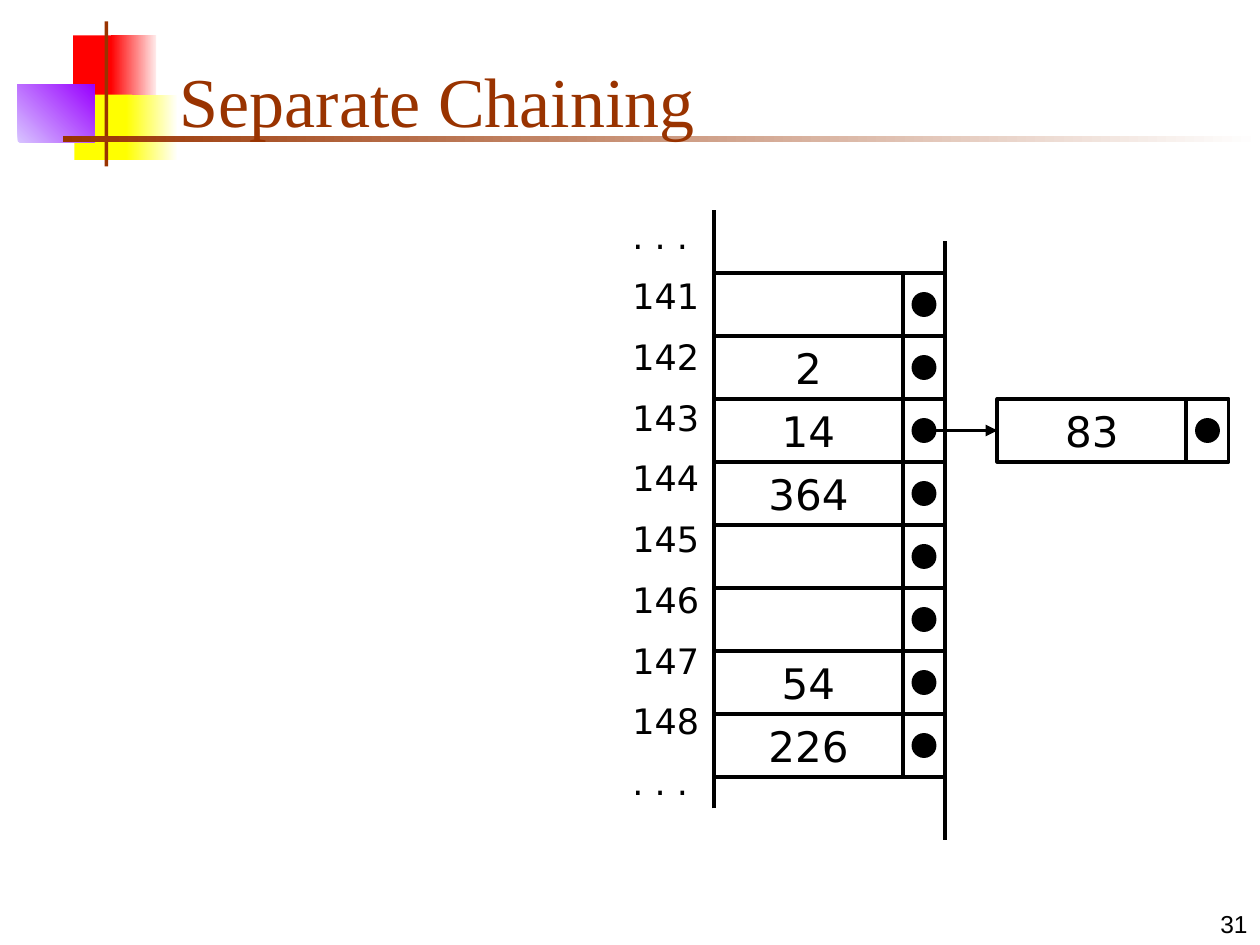
from lxml import etree
from pptx import Presentation
from pptx.dml.color import RGBColor
from pptx.enum.shapes import MSO_CONNECTOR, MSO_SHAPE
from pptx.enum.text import MSO_ANCHOR, PP_ALIGN
from pptx.oxml.ns import qn
from pptx.util import Inches, Pt

RECTANGLE = MSO_SHAPE.RECTANGLE
PROCESS = MSO_SHAPE.FLOWCHART_PROCESS
OVAL = MSO_SHAPE.OVAL
STRAIGHT = MSO_CONNECTOR.STRAIGHT
TOP, MIDDLE, BOTTOM = MSO_ANCHOR.TOP, MSO_ANCHOR.MIDDLE, MSO_ANCHOR.BOTTOM
LEFT, CENTER, RIGHT = PP_ALIGN.LEFT, PP_ALIGN.CENTER, PP_ALIGN.RIGHT

UNIT = 1 / 12
ROW, KEY_WIDTH, POINTER_WIDTH, DOT = 6, 18, 4, 2
TABLE_LEFT, TABLE_TOP, NODE_LEFT = 68, 26, 95
TABLE_RIGHT = TABLE_LEFT + KEY_WIDTH + POINTER_WIDTH
KEYS = ["", "2", "14", "364", "", "", "54", "226"]
CHAINED_ROW = 2
FIRST_INDEX = 141
INK, BROWN = "000000", "993300"
INDEX_FORMAT = {"name": "DejaVu Sans", "size": Pt(20)}
KEY_FORMAT = {"name": "DejaVu Sans", "size": Pt(24)}
TITLE_FORMAT = {"name": "Times New Roman", "size": Pt(40)}
NUMBER_FORMAT = {"name": "Arial", "size": Pt(14)}
ORNAMENTS = [
    ((0.58, 0.28, 0.35, 0.52), ["FF0000"], 0),
    ((0.88, 0.28, 0.36, 0.52), ["FF0000", "FFEAEA"], 0),
    ((0.59, 0.75, 0.46, 0.52), ["FFFF00"], 0),
    ((1, 0.75, 0.4, 0.52), ["FFFF00", "FFFFF8"], 0),
    ((0.14, 0.67, 0.61, 0.46), ["D8C4FF", "9900FF"], 45),
    ((0.83, 0.17, 0.03, 1.15), [BROWN], 0),
    ((0.5, 1.08, 9.5, 0.05), [BROWN, "FFFFFF"], 0),
]


def color(code):
    """Turn a hex string into a colour."""
    return RGBColor.from_string(code)


def grid(*units):
    """Convert grid units to lengths."""
    return [Inches(unit * UNIT) for unit in units]


def write(frame, lines, text_format, ink=INK, align=LEFT, gap=0):
    """Write one paragraph for each line."""
    for position, line in enumerate(lines):
        para = frame.paragraphs[0] if position == 0 else frame.add_paragraph()
        para.alignment = align
        para.space_after = Pt(gap)
        span = para.add_run()
        span.text = line
        span.font.color.rgb = color(ink)
        for name, value in text_format.items():
            setattr(span.font, name, value)


def add_text(page, place, lines, text_format, anchor=BOTTOM, **style):
    """Add a wrapped text box placed in inches."""
    box = page.shapes.add_textbox(*map(Inches, place))
    box.text_frame.word_wrap = True
    box.text_frame.vertical_anchor = anchor
    write(box.text_frame, lines, text_format, **style)


def add_ornament(page, place, shades, angle):
    """Add a borderless rectangle in a plain or graded colour."""
    box = page.shapes.add_shape(RECTANGLE, *map(Inches, place))
    box.shadow.inherit = False
    box.line.fill.background()
    if len(shades) == 1:
        box.fill.solid()
        box.fill.fore_color.rgb = color(shades[0])
        return
    box.fill.gradient()
    box.fill.gradient_angle = angle
    for stop, shade in zip(box.fill.gradient_stops, shades):
        stop.color.rgb = color(shade)


def stroke(item):
    """Give a shape or connector the diagram's line."""
    item.line.color.rgb = color(INK)
    item.line.width = Pt(2.25)


def add_outline(page, kind, *place):
    """Add an unfilled outlined shape on the grid."""
    shape = page.shapes.add_shape(kind, *grid(*place))
    shape.shadow.inherit = False
    shape.fill.background()
    stroke(shape)
    return shape


def add_node(page, left, top, key):
    """Add a key cell, its pointer cell and dot; return the key cell."""
    cell = add_outline(page, PROCESS, left, top, KEY_WIDTH, ROW)
    if key:
        cell.text_frame.word_wrap = False
        cell.text_frame.vertical_anchor = MIDDLE
        write(cell.text_frame, [key], KEY_FORMAT, align=CENTER)
    pointer = left + KEY_WIDTH
    add_outline(page, PROCESS, pointer, top, POINTER_WIDTH, ROW)
    dot = add_outline(page, OVAL, pointer + (POINTER_WIDTH - DOT) / 2,
                      top + (ROW - DOT) / 2, DOT, DOT)
    dot.fill.solid()
    dot.fill.fore_color.rgb = color(INK)
    return cell


def add_line(page, *ends):
    """Add a straight line on the grid."""
    line = page.shapes.add_connector(STRAIGHT, *grid(*ends))
    stroke(line)
    etree.SubElement(line._element.spPr, qn("a:effectLst"))
    return line


def add_link(page, left, top, node):
    """Draw an arrow from a pointer's middle to a node."""
    middle = top + ROW / 2
    arrow = add_line(page, left, middle, NODE_LEFT, middle)
    arrow.end_connect(node, 1)
    etree.SubElement(arrow.line._get_or_add_ln(), qn("a:tailEnd"), type="triangle")


def add_hash_table(page):
    """Add the indexed table and its one chained node."""
    for row, key in enumerate(KEYS):
        add_node(page, TABLE_LEFT, TABLE_TOP + row * ROW, key)
    indexes = [str(FIRST_INDEX + row) for row in range(len(KEYS))]
    add_text(page, (4.92, 1.65, 0.75, 5.02), [". . .", *indexes, ". . ."],
             INDEX_FORMAT, anchor=TOP, gap=10.7)
    add_line(page, TABLE_LEFT, 77, TABLE_LEFT, 20)
    add_line(page, TABLE_RIGHT, 80, TABLE_RIGHT, 23)
    chain_top = TABLE_TOP + CHAINED_ROW * ROW
    node = add_node(page, NODE_LEFT, chain_top, "83")
    add_link(page, TABLE_RIGHT - POINTER_WIDTH / 2, chain_top, node)


def main():
    """Build and save the slide."""
    deck = Presentation()
    deck.slide_width, deck.slide_height = Inches(10), Inches(7.5)
    page = deck.slides.add_slide(deck.slide_layouts[6])
    for ornament in ORNAMENTS:
        add_ornament(page, *ornament)
    add_text(page, (7.92, 7, 2.08, 0.5), ["31"], NUMBER_FORMAT, align=RIGHT)
    add_text(page, (1.33, 0.25, 8.52, 0.92), ["Separate Chaining"],
             TITLE_FORMAT, ink=BROWN)
    add_hash_table(page)
    deck.save("out.pptx")


if __name__ == "__main__":
    main()
